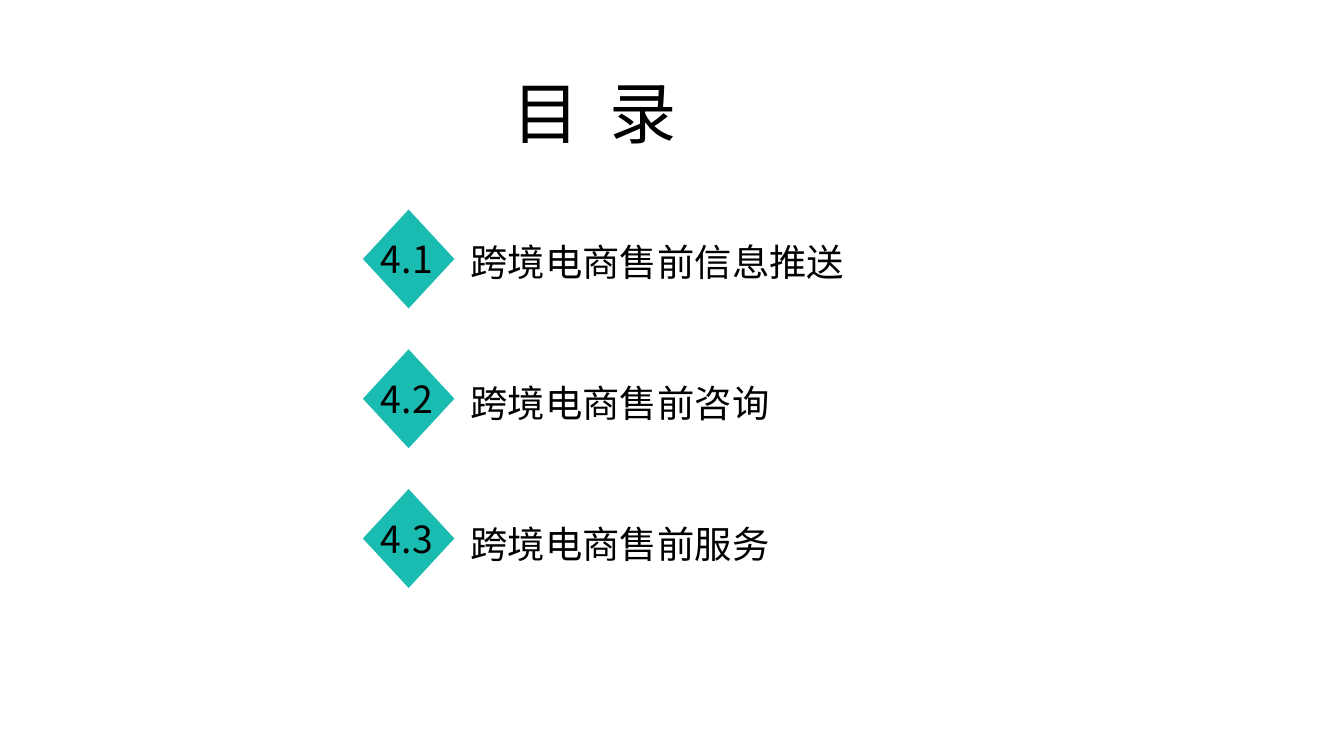
from collections import namedtuple
from dataclasses import dataclass

from lxml.etree import SubElement
from pptx import Presentation
from pptx.dml.color import RGBColor
from pptx.enum.shapes import MSO_SHAPE
from pptx.enum.text import MSO_ANCHOR, MSO_AUTO_SIZE, PP_ALIGN
from pptx.oxml.ns import qn
from pptx.util import Pt

Box = namedtuple("Box", "left top width height")


@dataclass(frozen=True)
class Theme:
    font: str = "Noto Sans CJK SC"
    ink: RGBColor = RGBColor(0x00, 0x00, 0x00)
    accent: RGBColor = RGBColor(0x1A, 0xBB, 0xB1)
    title_size: int = 36
    entry_size: int = 20


THEME = Theme()
LABEL_HEIGHT = 31.5
ENTRIES = [
    ("4.1", "跨境电商售前信息推送"),
    ("4.2", "跨境电商售前咨询"),
    ("4.3", "跨境电商售前服务"),
]


def in_points(box):
    return [Pt(length) for length in box]


def stack(box, count, row_height):
    """Spread equal rows from the top to the bottom of a box."""
    pitch = (box.height - row_height) / (count - 1)
    return [Box(box.left, box.top + row * pitch, box.width, row_height)
            for row in range(count)]


def write(frame, text, size):
    """Fill a text frame with one left-aligned line in the theme font."""
    frame.word_wrap = True
    frame.auto_size = MSO_AUTO_SIZE.NONE
    frame.vertical_anchor = MSO_ANCHOR.TOP
    frame.text = text
    line = frame.paragraphs[0]
    line.alignment = PP_ALIGN.LEFT
    line.font.size = Pt(size)
    line.font.name = THEME.font
    line.font.color.rgb = THEME.ink
    # Chinese characters take the East Asian typeface
    SubElement(line.font._element, qn("a:ea"), typeface=THEME.font)


def add_label(slide, box, text):
    label = slide.shapes.add_textbox(*in_points(box))
    write(label.text_frame, text, THEME.entry_size)


def add_heading(slide, box):
    heading = slide.shapes.title
    heading.left, heading.top, heading.width, heading.height = in_points(box)
    write(heading.text_frame, "目  录", THEME.title_size)


def add_numbers(slide, box, numbers):
    for number, row in zip(numbers, stack(box, len(numbers), 53)):
        # Diamond marker
        marker = slide.shapes.add_shape(MSO_SHAPE.DIAMOND, *in_points(row))
        marker.shadow.inherit = False
        marker.fill.solid()
        marker.fill.fore_color.rgb = THEME.accent
        marker.line.fill.background()

        # Section number
        add_label(slide, Box(row.left + 2.6, row.top + 10.8, 45.4,
                             LABEL_HEIGHT), number)


def add_topics(slide, box, topics):
    for topic, row in zip(topics, stack(box, len(topics), LABEL_HEIGHT)):
        add_label(slide, row, topic)


def main():
    deck = Presentation()
    deck.slide_width, deck.slide_height = Pt(720), Pt(405.13)
    slide = deck.slides.add_slide(deck.slide_layouts.get_by_name("Title Only"))
    numbers, topics = zip(*ENTRIES)
    add_heading(slide, Box(267.3, 34.6, 147.6, 51))
    add_numbers(slide, Box(194.4, 112.3, 49, 202.8), numbers)
    add_topics(slide, Box(244.9, 124.5, 250.6, 182.7), topics)
    deck.save("out.pptx")


if __name__ == "__main__":
    main()
